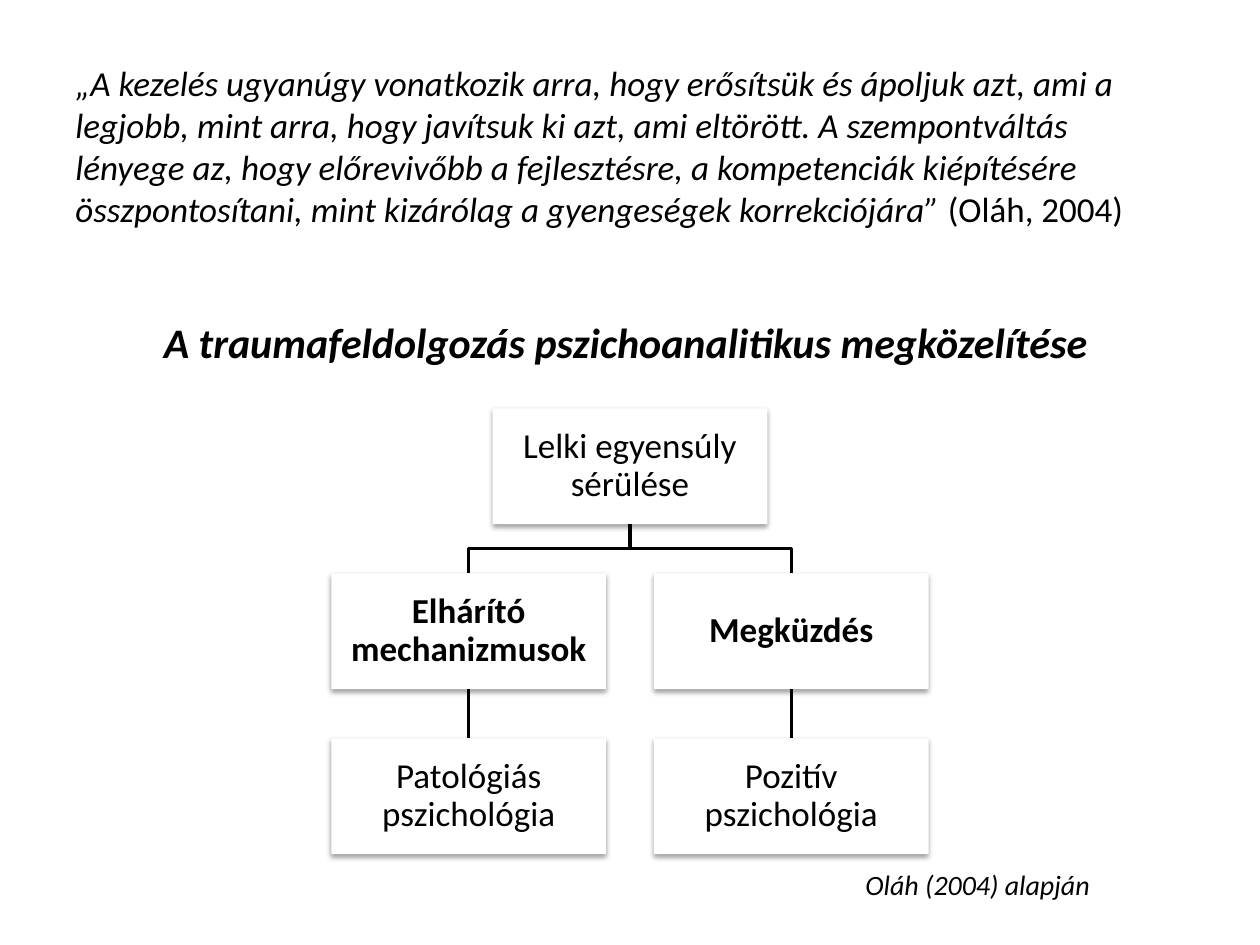
from lxml import etree
from pptx import Presentation
from pptx.dml.color import RGBColor
from pptx.enum.shapes import MSO_CONNECTOR, MSO_SHAPE
from pptx.enum.text import MSO_ANCHOR, MSO_AUTO_SIZE, PP_ALIGN
from pptx.oxml import parse_xml
from pptx.oxml.ns import nsdecls, qn
from pptx.util import Inches, Pt

BLACK = RGBColor(0, 0, 0)
WHITE = RGBColor(255, 255, 255)
FONT = "Calibri"
LINE_WIDTH = Pt(2)

QUOTE = (
    "„A kezelés ugyanúgy vonatkozik arra, hogy erősítsük és ápoljuk azt, ami a "
    "legjobb, mint arra, hogy javítsuk ki azt, ami eltörött. A szempontváltás "
    "lényege az, hogy előrevivőbb a fejlesztésre, a kompetenciák kiépítésére "
    "összpontosítani, mint kizárólag a gyengeségek korrekciójára” "
)
ROOT = "Lelki egyensúly sérülése"
BRANCHES = [
    ("Elhárító mechanizmusok", "Patológiás pszichológia"),
    ("Megküzdés", "Pozitív pszichológia"),
]
BOX_WIDTH, BOX_HEIGHT = Inches(2.18), Inches(0.92)


def style(paragraph, size, bold=False, italic=None):
    font = paragraph.font
    font.name, font.size, font.bold, font.italic = FONT, Pt(size), bold, italic
    font.color.rgb = BLACK


def add_title(slide, left, top, width, height):
    title = slide.shapes.title
    title.left, title.top, title.width, title.height = left, top, width, height
    frame = title.text_frame
    frame.text = "A traumafeldolgozás pszichoanalitikus megközelítése"
    frame.word_wrap = False
    frame.auto_size = MSO_AUTO_SIZE.NONE
    frame.vertical_anchor = MSO_ANCHOR.TOP
    frame.paragraphs[0].alignment = PP_ALIGN.LEFT
    style(frame.paragraphs[0], 24, bold=True, italic=True)


def add_quote(slide, left, top, width, height):
    frame = slide.shapes.add_textbox(left, top, width, height).text_frame
    frame.word_wrap = True
    paragraph = frame.paragraphs[0]
    style(paragraph, 20)
    for text, italic in ((QUOTE, True), ("(Oláh, 2004)", False)):
        run = paragraph.add_run()
        run.text = text
        run.font.italic = italic


def add_source(slide, left, top, width, height):
    frame = slide.shapes.add_textbox(left, top, width, height).text_frame
    frame.word_wrap = False
    frame.text = "Oláh (2004) alapján"
    style(frame.paragraphs[0], 16, italic=True)


def add_box(slide, text, left, top, bold=False):
    box = slide.shapes.add_shape(MSO_SHAPE.RECTANGLE, left, top, BOX_WIDTH, BOX_HEIGHT)
    box.fill.solid()
    box.fill.fore_color.rgb = WHITE
    box.line.fill.background()
    box.shadow.inherit = False
    effects = box._element.spPr.find(qn("a:effectLst"))
    effects.append(parse_xml(
        f'<a:outerShdw {nsdecls("a")} blurRad="{Pt(3.1)}" dist="{Pt(1.6)}" '
        'dir="5400000" rotWithShape="0"><a:srgbClr val="000000">'
        '<a:alpha val="38000"/></a:srgbClr></a:outerShdw>'))
    frame = box.text_frame
    frame.word_wrap = True
    frame.vertical_anchor = MSO_ANCHOR.MIDDLE
    frame.margin_left = frame.margin_right = Inches(0.01)
    frame.margin_top = frame.margin_bottom = Inches(0.01)
    frame.text = text
    paragraph = frame.paragraphs[0]
    paragraph.alignment = PP_ALIGN.CENTER
    paragraph.line_spacing = 0.9
    style(paragraph, 20, bold=bold)
    return box


def add_elbow(slide, parent, child):
    """Draw a bent line from the parent's bottom to the child's top."""
    start_x, start_y = parent.left + parent.width // 2, parent.top + parent.height
    end_x = child.left + child.width // 2
    middle_y = (start_y + child.top) // 2
    builder = slide.shapes.build_freeform(start_x, start_y)
    builder.add_line_segments(
        [(start_x, middle_y), (end_x, middle_y), (end_x, child.top)], close=False)
    elbow = builder.convert_to_shape()
    elbow.fill.background()
    elbow.line.color.rgb = BLACK
    elbow.line.width = LINE_WIDTH
    elbow.shadow.inherit = False


def add_straight(slide, parent, child):
    connector = slide.shapes.add_connector(MSO_CONNECTOR.STRAIGHT, 0, 0, 0, 0)
    connector.begin_connect(parent, 2)
    connector.end_connect(child, 0)
    connector.line.color.rgb = BLACK
    connector.line.width = LINE_WIDTH
    etree.SubElement(connector._element.spPr, qn("a:effectLst"))


def add_tree(slide, left, top, width, height):
    row_step = (height - BOX_HEIGHT) // 2
    column_step = width - BOX_WIDTH
    root = add_box(slide, ROOT, left + column_step // 2, top)
    for column, (approach, field) in enumerate(BRANCHES):
        x = left + column * column_step
        approach_box = add_box(slide, approach, x, top + row_step, bold=True)
        field_box = add_box(slide, field, x, top + 2 * row_step)
        add_elbow(slide, root, approach_box)
        add_straight(slide, approach_box, field_box)


def main():
    presentation = Presentation()
    presentation.slide_width, presentation.slide_height = Inches(10), Inches(7.5)
    slide = presentation.slides.add_slide(presentation.slide_layouts[5])
    add_quote(slide, Inches(0.5), Inches(0.44), Inches(9), Inches(1.57))
    add_title(slide, Inches(1.2), Inches(2.46), Inches(7.6), Inches(0.5))
    add_tree(slide, Inches(2.63), Inches(3.24), Inches(4.74), Inches(3.54))
    add_source(slide, Inches(6.77), Inches(6.84), Inches(2.01), Inches(0.37))
    presentation.save("out.pptx")


if __name__ == "__main__":
    main()
